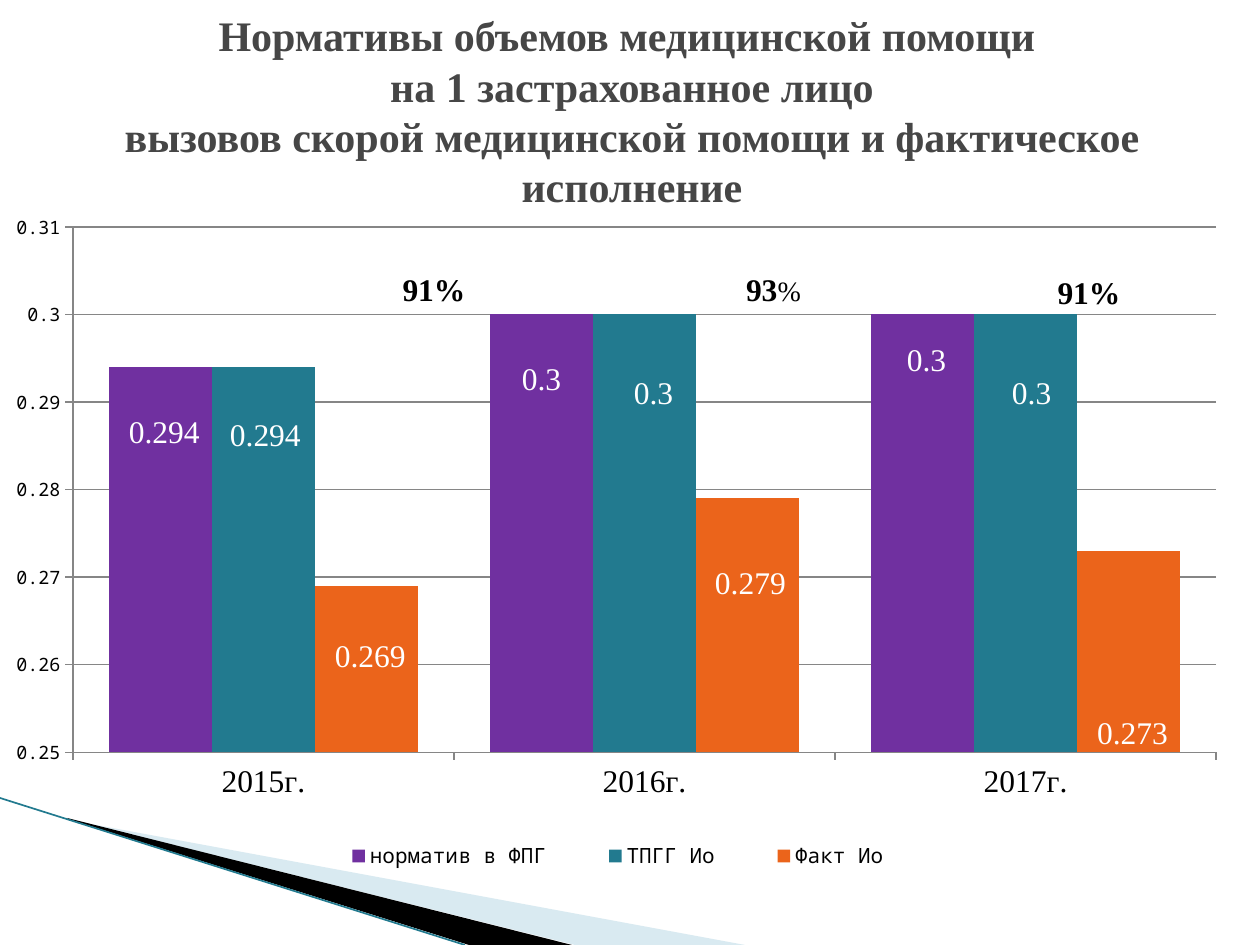
from dataclasses import dataclass

from lxml import etree
from pptx import Presentation
from pptx.chart.data import CategoryChartData
from pptx.dml.color import RGBColor
from pptx.enum.chart import XL_CHART_TYPE, XL_LABEL_POSITION, XL_LEGEND_POSITION, XL_TICK_MARK
from pptx.enum.shapes import MSO_CONNECTOR, MSO_SHAPE
from pptx.enum.text import MSO_ANCHOR, PP_ALIGN
from pptx.oxml.ns import qn
from pptx.util import Emu, Pt

EMU_PER_PX = 914400 / 126
CHART_EXTENSION = "http://schemas.microsoft.com/office/drawing/2012/chart"


@dataclass(frozen=True)
class Theme:
    serif: str = "Times New Roman"
    mono: str = "Noto Sans Mono"
    title: str = "464646"
    black: str = "000000"
    white: str = "FFFFFF"
    grid: str = "868686"
    pale: str = "A0CBDC"
    purple: str = "7030A0"
    teal: str = "227A8F"
    orange: str = "EB641B"
    title_size: float = 24
    body_size: float = 18
    percent_size: float = 16
    legend_size: float = 12
    axis_size: float = 10.5


def px(length):
    return Emu(round(length * EMU_PER_PX))


def rgb(color):
    return RGBColor.from_string(color)


def style_font(font, name, size, color, bold=False):
    font.name, font.size, font.bold = name, Pt(size), bold
    font.color.rgb = rgb(color)


def set_layout(parent, index, **values):
    for old in parent.findall(qn("c:layout")):
        parent.remove(old)
    layout = etree.Element(qn("c:layout"))
    manual = etree.SubElement(layout, qn("c:manualLayout"))
    for tag, value in values.items():
        etree.SubElement(manual, qn(f"c:{tag}")).set("val", str(value))
    parent.insert(index, layout)


def hide_leader_lines(labels):
    for old in labels.findall(qn("c:showLeaderLines")):
        old.set("val", "0")
    extensions = etree.SubElement(labels, qn("c:extLst"))
    extension = etree.SubElement(extensions, qn("c:ext"), nsmap={"c15": CHART_EXTENSION})
    extension.set("uri", "{CE6537A1-D6FC-4f65-9D91-7224C49458BB}")
    etree.SubElement(extension, f"{{{CHART_EXTENSION}}}showLeaderLines").set("val", "0")


class SlideBuilder:
    def __init__(self, slide, theme):
        self.slide, self.theme = slide, theme

    def wedge(self, points, color, alpha=None):
        builder = self.slide.shapes.build_freeform(*points[0], scale=EMU_PER_PX)
        builder.add_line_segments(points[1:])
        shape = builder.convert_to_shape()
        shape.shadow.inherit = False
        shape.fill.solid()
        shape.fill.fore_color.rgb = rgb(color)
        shape.line.fill.background()
        if alpha:
            fill_color = shape._element.spPr.find(".//" + qn("a:srgbClr"))
            etree.SubElement(fill_color, qn("a:alpha")).set("val", str(alpha * 1000))

    def line(self, start, end, color, width):
        ends = [px(value) for value in (*start, *end)]
        connector = self.slide.shapes.add_connector(MSO_CONNECTOR.STRAIGHT, *ends)
        connector.line.color.rgb = rgb(color)
        connector.line.width = Pt(width)
        etree.SubElement(connector._element.spPr, qn("a:effectLst"))

    def title(self, box, lines):
        frame = self.slide.shapes.add_textbox(*map(px, box)).text_frame
        frame.word_wrap = True
        frame.vertical_anchor = MSO_ANCHOR.MIDDLE
        paragraph = frame.paragraphs[0]
        paragraph.alignment = PP_ALIGN.CENTER
        paragraph.line_spacing = Pt(28.8)
        for index, text in enumerate(lines):
            if index:
                paragraph.add_line_break()
            run = paragraph.add_run()
            run.text = text
            style_font(run.font, self.theme.serif, self.theme.title_size, self.theme.title, True)

    def callout(self, box, runs):
        shape = self.slide.shapes.add_shape(MSO_SHAPE.OVAL_CALLOUT, *map(px, box))
        shape.shadow.inherit = False
        shape.adjustments[0], shape.adjustments[1] = 0.39, 1.86
        shape.fill.background()
        shape.line.fill.background()
        shape.text_frame.vertical_anchor = MSO_ANCHOR.MIDDLE
        paragraph = shape.text_frame.paragraphs[0]
        paragraph.alignment = PP_ALIGN.RIGHT
        for text, size, bold in runs:
            run = paragraph.add_run()
            run.text = text
            style_font(run.font, self.theme.serif, size, self.theme.black, bold)

    def column_chart(self, box, categories, rows):
        theme = self.theme
        data = CategoryChartData()
        data.categories = categories
        for name, _, values, _ in rows:
            data.add_series(name, values)
        chart = self.slide.shapes.add_chart(
            XL_CHART_TYPE.COLUMN_CLUSTERED, *map(px, box), data).chart
        chart.has_title = False
        style_font(chart.font, theme.mono, theme.body_size, theme.black)
        set_layout(chart._chartSpace.chart.plotArea, 0, layoutTarget="inner",
                   xMode="edge", yMode="edge", x=0.059, y=0.031, w=0.925, h=0.709)

        # Axes and legend
        value_axis, category_axis = chart.value_axis, chart.category_axis
        value_axis.minimum_scale, value_axis.maximum_scale = 0.25, 0.31
        value_axis.major_unit = 0.01
        value_axis.has_major_gridlines = True
        value_axis.major_gridlines.format.line.color.rgb = rgb(theme.grid)
        for axis, font, size in ((value_axis, theme.mono, theme.axis_size),
                                 (category_axis, theme.serif, theme.body_size)):
            axis.major_tick_mark = XL_TICK_MARK.OUTSIDE
            axis.format.line.color.rgb = rgb(theme.grid)
            style_font(axis.tick_labels.font, font, size, theme.black)
        chart.has_legend = True
        chart.legend.position = XL_LEGEND_POSITION.BOTTOM
        chart.legend.include_in_layout = False
        style_font(chart.legend.font, theme.mono, theme.legend_size, theme.black)
        set_layout(chart.legend._element, 1, xMode="edge", yMode="edge",
                   x=0.24, y=0.85, w=0.52, h=0.06)

        # Columns, each label shifted from its place above the column
        plot = chart.plots[0]
        plot.gap_width, plot.overlap = 70, 0
        plot.vary_by_categories = False
        for series, (_, color, _, shifts) in zip(plot.series, rows):
            series.format.fill.solid()
            series.format.fill.fore_color.rgb = rgb(color)
            series.data_labels.show_value = True
            style_font(series.data_labels.font, theme.serif, theme.body_size, theme.white)
            for index, (right, down) in enumerate(shifts):
                label = series.points[index].data_label
                style_font(label.font, theme.serif, theme.body_size, theme.white)
                label.position = XL_LABEL_POSITION.OUTSIDE_END
                element = series._element.xpath(f"c:dLbls/c:dLbl[c:idx/@val='{index}']")[0]
                set_layout(element, 1, x=round(right / box[2], 4), y=round(down / box[3], 4))
            hide_leader_lines(series._element.find(qn("c:dLbls")))


def main():
    theme = Theme()
    presentation = Presentation()
    presentation.slide_width, presentation.slide_height = px(1260), px(945)
    slide = presentation.slides.add_slide(presentation.slide_layouts[6])
    builder = SlideBuilder(slide, theme)

    # Corner decoration
    builder.wedge([(69, 820), (745, 945), (575, 945), (69, 819)], theme.pale, 40)
    builder.wedge([(67, 818), (572, 945), (469, 945), (68, 819)], theme.black)
    builder.line((0, 798), (465, 945), theme.teal, 0.95)

    builder.title((101, 36, 1062, 149), [
        "Нормативы объемов медицинской помощи ",
        "на 1 застрахованное лицо",
        "вызовов скорой медицинской помощи и фактическое исполнение",
    ])

    # Norms and actual calls: name, colour, values, label shifts
    builder.column_chart((0, 204, 1236, 741), ["2015г.", "2016г.", "2017г."], [
        ("норматив в ФПГ", theme.purple, (0.294, 0.3, 0.3), [(4, 88), (0, 88), (4, 69)]),
        ("ТПГГ Ио", theme.teal, (0.294, 0.3, 0.3), [(2, 91), (9, 102), (6, 102)]),
        ("Факт Ио", theme.orange, (0.269, 0.279, 0.273), [(4, 93), (3, 108), (4, 205)]),
    ])

    # Share of the norm fulfilled
    size = theme.body_size
    builder.callout((233, 247, 287, 84), [("91%", size, True)])
    builder.callout((552, 247, 306, 84), [("93", size, True), ("%", theme.percent_size, False)])
    builder.callout((888, 234, 287, 115), [("91%", size, True)])

    presentation.save("out.pptx")


if __name__ == "__main__":
    main()
